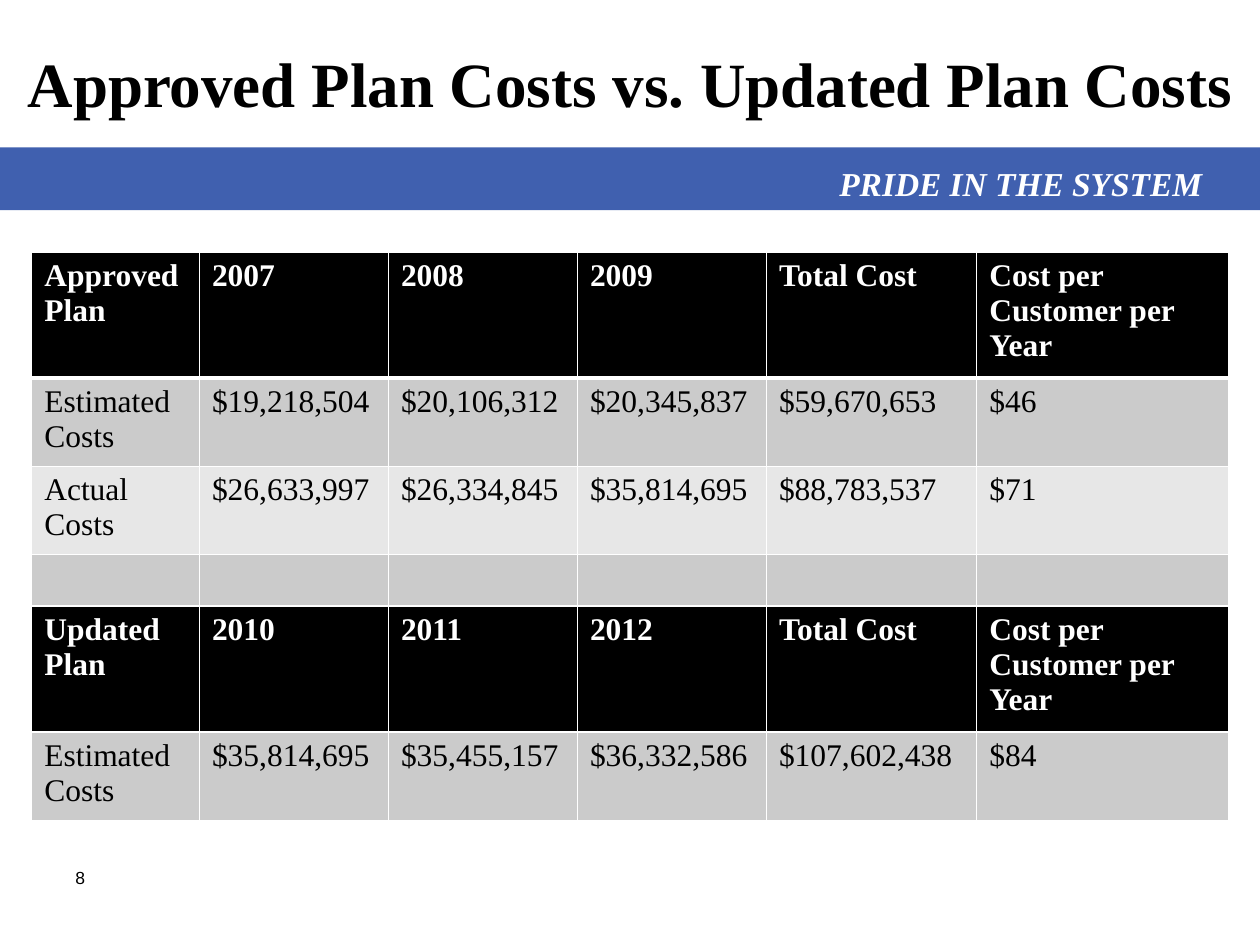
from dataclasses import dataclass

import pptx
import pptx.dml.color
import pptx.enum.shapes
import pptx.enum.text
import pptx.oxml
import pptx.oxml.ns
import pptx.util
from pptx.util import Cm, Pt


@dataclass(frozen=True)
class Theme:
    """Colours, fonts and type sizes of the deck."""
    black: str = "000000"
    white: str = "FFFFFF"
    blue: str = "4060AF"
    grey: str = "CBCBCB"
    light_grey: str = "E7E7E7"
    serif: str = "Times New Roman"
    sans: str = "Arial"
    title: int = 36
    motto: int = 33
    table: int = 18
    number: int = 10
    rule: int = 1
    heavy_rule: int = 3


THEME = Theme()
ALIGN = pptx.enum.text.PP_ALIGN

COLUMN_WIDTHS = (3.38, 3.81, 3.81, 3.81, 4.24, 5.08)
ROW_HEIGHT = 1.04
TOTALS = ("Total Cost", "Cost per Customer per Year")
COST_ROWS = (
    (THEME.black, ("Approved Plan", "2007", "2008", "2009", *TOTALS)),
    (THEME.grey, ("Estimated Costs", "$19,218,504", "$20,106,312",
                  "$20,345,837", "$59,670,653", "$46")),
    (THEME.light_grey, ("Actual Costs", "$26,633,997", "$26,334,845",
                        "$35,814,695", "$88,783,537", "$71")),
    (THEME.grey, ("",) * len(COLUMN_WIDTHS)),
    (THEME.black, ("Updated\nPlan", "2010", "2011", "2012", *TOTALS)),
    (THEME.grey, ("Estimated Costs", "$35,814,695", "$35,455,157",
                  "$36,332,586", "$107,602,438", "$84")),
)


def rgb(colour):
    """Turn a hex string into a colour object."""
    return pptx.dml.color.RGBColor.from_string(colour)


def write(frame, text, size, colour, font=THEME.serif, bold=False, italic=False,
          align=ALIGN.LEFT):
    """Fill a text frame and format all of its paragraphs and runs."""
    frame.text = text
    frame.word_wrap = True
    for para in frame.paragraphs:
        para.alignment = align
        for style in (para.font, *(span.font for span in para.runs)):
            style.name, style.size = font, Pt(size)
            style.bold, style.italic = bold, italic
            style.color.rgb = rgb(colour)


def add_text(page, left, top, width, height, text, size, colour, **style):
    """Add a text box and return its frame."""
    box = page.shapes.add_textbox(Cm(left), Cm(top), Cm(width), Cm(height))
    write(box.text_frame, text, size, colour, **style)
    return box.text_frame


def add_banner(page, left, top, width, height):
    """Draw the blue band with its lowered motto."""
    band = page.shapes.add_shape(pptx.enum.shapes.MSO_SHAPE.RECTANGLE,
                                 Cm(left), Cm(top), Cm(width), Cm(height))
    band.shadow.inherit = False
    band.fill.solid()
    band.fill.fore_color.rgb = rgb(THEME.blue)
    band.line.fill.background()
    frame = add_text(page, left + 13.28, top - 0.61, 11.51, 1.68,
                     "PRIDE IN THE SYSTEM ", THEME.motto, THEME.white,
                     bold=True, italic=True, align=ALIGN.RIGHT)
    frame.margin_top, frame.margin_right, frame.margin_bottom = Cm(0.14), Cm(0.39), 0
    frame.paragraphs[0].runs[0].font._element.set("baseline", "-25000")


def add_title(page, left, top, width, height):
    """Place the centred title on the bottom of its box."""
    frame = add_text(page, left, top, width, height,
                     "Approved Plan Costs vs. Updated Plan Costs",
                     THEME.title, THEME.black, bold=True, align=ALIGN.CENTER)
    frame.vertical_anchor = pptx.enum.text.MSO_ANCHOR.BOTTOM


def add_border(cell, side, weight):
    """Append one white border line to a cell."""
    namespace = pptx.oxml.ns.nsdecls("a")
    cell._tc.get_or_add_tcPr().append(pptx.oxml.parse_xml(
        f'<a:{side} {namespace} w="{Pt(weight)}"><a:solidFill>'
        f'<a:srgbClr val="{THEME.white}"/></a:solidFill></a:{side}>'))


def add_cost_table(page, left, top, width, height):
    """Build the table of plan costs, whose rows grow with their text."""
    holder = page.shapes.add_table(len(COST_ROWS), len(COLUMN_WIDTHS), Cm(left),
                                   Cm(top), Cm(width), Cm(height))
    table = holder.table
    table.first_row = table.horz_banding = False
    for column, column_width in zip(table.columns, COLUMN_WIDTHS):
        column.width = Cm(column_width)
    for index, (fill, texts) in enumerate(COST_ROWS):
        table.rows[index].height = Cm(ROW_HEIGHT)
        header = fill == THEME.black
        weights = {"lnL": THEME.rule, "lnR": THEME.rule,
                   "lnT": THEME.heavy_rule if index == 1 else THEME.rule,
                   "lnB": THEME.heavy_rule if index == 0 else THEME.rule}
        for cell, text in zip(table.rows[index].cells, texts):
            for side, weight in weights.items():
                add_border(cell, side, weight)
            cell.fill.solid()
            cell.fill.fore_color.rgb = rgb(fill)
            write(cell.text_frame, text, THEME.table,
                  THEME.white if header else THEME.black, bold=header)
    holder.height = Cm(height)


def add_page_number(page, left, top, width, height):
    """Place the page number at the foot."""
    add_text(page, left, top, width, height, "8", THEME.number, THEME.black,
             font=THEME.sans)


def main():
    """Build the deck and save it."""
    deck = pptx.Presentation()
    deck.slide_width, deck.slide_height = Cm(25.4), Cm(19.05)
    page = deck.slides.add_slide(deck.slide_layouts[6])
    add_banner(page, 0, 2.97, 25.4, 1.27)
    add_page_number(page, 1.27, 17.35, 5.28, 1.27)
    add_title(page, 0, 0.43, 25.4, 2.11)
    add_cost_table(page, 0.64, 5.08, 24.13, 11.46)
    deck.save("out.pptx")


if __name__ == "__main__":
    main()
